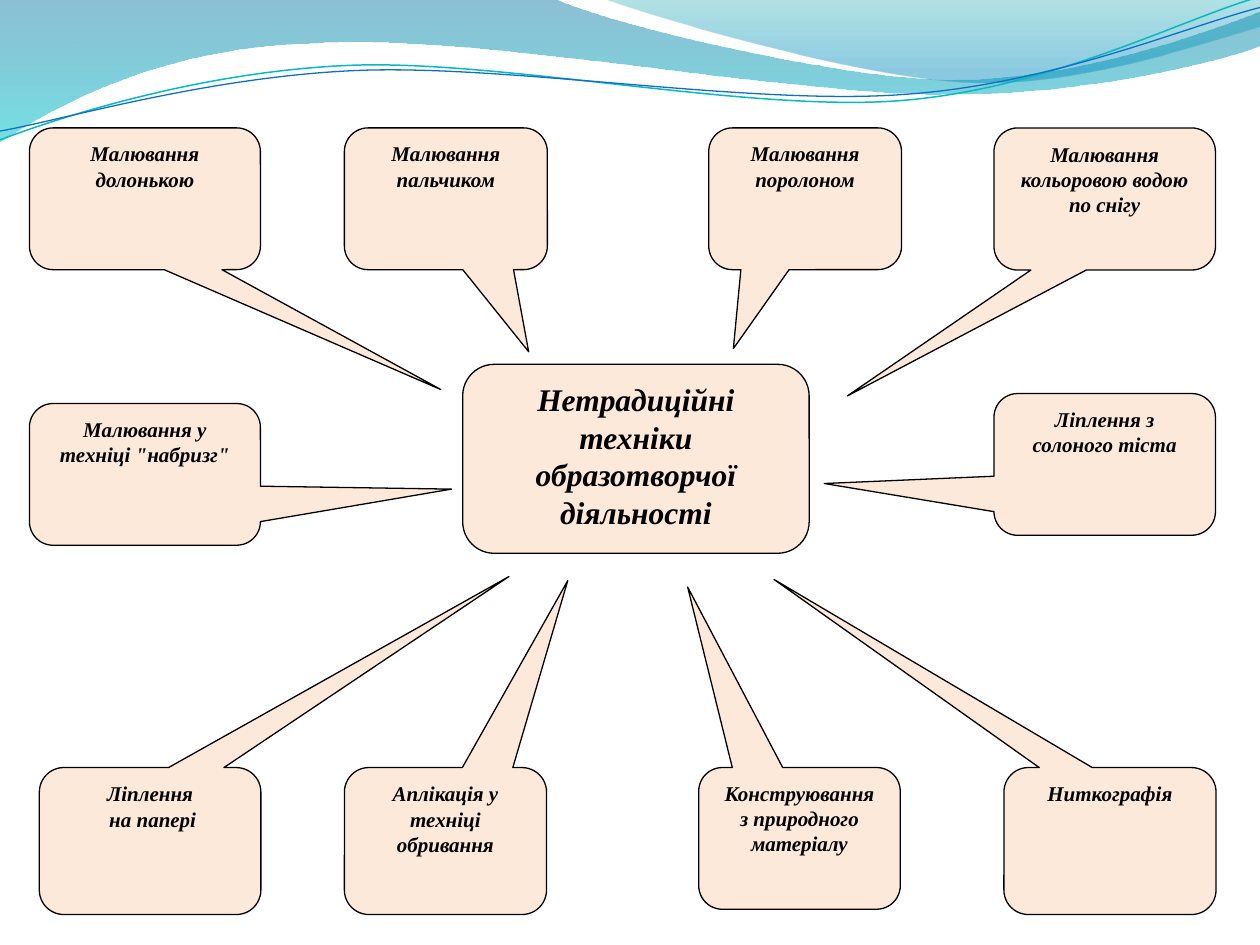
import math

from lxml import etree
from pptx import Presentation
from pptx import util as u
from pptx.dml.color import RGBColor
from pptx.enum import shapes, text

COLORS = {
    "card": "FDE9D9", "ink": "000000",
    "deep blue": "0074A1", "cyan": "00C6CF",
    "teal": "00A1A9", "sky": "008BBF",
    "teal line": "0AB8BF", "blue line": "0F6FC6",
}
rgb = {name: RGBColor.from_string(value) for name, value in COLORS.items()}

deck = Presentation()
deck.slide_width, deck.slide_height = u.Pt(720), u.Pt(540)
slide = deck.slides.add_slide(deck.slide_layouts[6])


def draw_curve(start, pieces, close):
    """Outline of straight pieces (one point) and Bezier pieces (three points)."""
    points = [(u.Pt(x), u.Pt(y)) for x, y in [start, *sum(pieces, [])]]
    builder = slide.shapes.build_freeform(*points[0])
    builder.add_line_segments(points[1:], close=close)
    curve = builder.convert_to_shape()
    curve.shadow.inherit = False
    segments = iter(list(curve.element.iter("{*}lnTo")))
    for piece in pieces:
        first, *others = [next(segments) for _ in piece]
        if others:
            first.tag = first.tag.replace("lnTo", "cubicBezTo")
            for segment in others:
                first.append(segment[0])
                segment.getparent().remove(segment)
    return curve


def write(shape, words, size=12, color="ink", after=0):
    frame = shape.text_frame
    frame.word_wrap = True
    frame.vertical_anchor = text.MSO_ANCHOR.TOP
    frame.text = words
    for paragraph in frame.paragraphs:
        paragraph.alignment = text.PP_ALIGN.CENTER
        paragraph.space_after = u.Pt(after)
        for run in paragraph.runs:
            font = run.font
            font.name, font.size = "Times New Roman", u.Pt(size)
            font.bold = font.italic = True
            font.color.rgb = rgb[color]


# Translucent waves along the top: start, pieces, (position, colour, alpha %) stops
waves = [
    ((0, 0),
     [[(316.8, -0.7)],
      [(342.7, 12.2), (478, 45.4), (545.8, 45.4)],
      [(614.2, 45.4), (689.8, 18.7), (720, 6.5)],
      [(720.7, 25.9)],
      [(707.8, 31.7), (626.4, 54.7), (537.1, 54)],
      [(447.8, 54), (275, 20.2), (185, 24.5)],
      [(92.9, 25.9), (33.1, 59.8), (-0.7, 81.4)],
      [(0, 0)]],
     [(0, "deep blue", 45), (1, "cyan", 55)]),
    ((344.9, -0.7),
     [[(366.5, 7.9), (491, 44.6), (553.7, 46.8)],
      [(616.3, 49.7), (691.9, 23), (720, 15.1)],
      [(720, 0)],
      [(344.9, -0.7)]],
     [(0, "teal", 30), (0.8, "sky", 45)]),
]
for start, pieces, stops in waves:
    wave = draw_curve(start, pieces, close=True)
    wave.line.fill.background()
    wave.fill.gradient()
    wave.fill.gradient_angle = 270
    for stop, (position, color, alpha) in zip(wave.fill.gradient_stops, stops):
        stop.position = position
        stop.color.rgb = rgb[color]
    for tint, (_, _, alpha) in zip(wave.element.spPr.iter("{*}srgbClr"), stops):
        etree.SubElement(tint, tint.tag.replace("srgbClr", "alpha"), val=str(alpha * 1000))

# Thin lines following the waves: level curves, turned as a whole by the tilt
TILT = 2.7
threads = [
    ((0, 79.9),
     [[(34.6, 67), (113.8, 41), (199.4, 37.4)],
      [(284.4, 33.8), (427, 64.1), (513.4, 57.6)],
      [(599.8, 51.1), (675.4, 10.8), (718.6, -1.4)]], 41.4, "teal line", 0.85),
    ((0, 74.9),
     [[(33.8, 69.1), (118.1, 43.9), (203.8, 40.3)],
      [(290.2, 36.7), (429.8, 60.5), (516.2, 54)],
      [(601.9, 48.2), (677.5, 15.1), (720, 4.3)]], 42.5, "blue line", 0.75),
]
cos, sin = math.cos(math.radians(TILT)), math.sin(math.radians(TILT))
for start, pieces, middle, color, width in threads:
    (start,), *pieces = [[(360 + (x - 360) * cos - (y - middle) * sin,
                           middle + (x - 360) * sin + (y - middle) * cos)
                          for x, y in piece] for piece in [[start], *pieces]]
    thread = draw_curve(start, pieces, close=False)
    thread.rotation = -TILT
    thread.fill.background()
    thread.line.color.rgb = rgb[color]
    thread.line.width = u.Pt(width)

# Central topic and the techniques around it:
# words, left, top, width, height, callout tip (x, y), size, space after
TOP, BOTTOM = 73.1, 438.6
cards = [
    ("Нетрадиційні техніки образотворчої діяльності",
     264.4, 208.2, 198, 108, None, 18, 0),
    ("Ліплення\n на папері", 22.5, BOTTOM, 126.6, 84, (1.62, -1.8), 12, 0),
    ("Конструювання з природного матеріалу",
     399.3, BOTTOM, 115.2, 81, (-0.555, -1.773), 12, 0),
    ("Ниткографія", 573.7, BOTTOM, 121.2, 84, (-1.584, -1.78), 12, 0),
    ("Аплікація у техніці обривання",
     196.8, BOTTOM, 115.5, 84, (0.605, -1.772), 12, 0),
    ("Малювання у техніці \"набризг\"", 16.8, 230.6, 132, 81, (1.327, 0.104), 12, 0),
    ("Ліплення з солоного тіста", 568, 224.9, 126.6, 81, (-1.266, 0.135), 12, 0),
    ("Малювання долонькою", 16.8, TOP, 132, 81, (1.281, 1.346), 12, 10),
    ("Малювання пальчиком", 196.8, TOP, 116, 81, (0.408, 1.079), 12, 10),
    ("Малювання поролоном", 405, TOP, 110.2, 81, (-0.372, 1.057), 12, 10),
    ("Малювання кольоровою водою по снігу",
     568, TOP, 126.6, 81.2, (-1.162, 1.386), 12, 10),
]
for words, left, top, width, height, tip, size, after in cards:
    outline = (shapes.MSO_SHAPE.ROUNDED_RECTANGULAR_CALLOUT if tip
               else shapes.MSO_SHAPE.ROUNDED_RECTANGLE)
    card = slide.shapes.add_shape(outline, u.Pt(left), u.Pt(top), u.Pt(width), u.Pt(height))
    for index, value in enumerate([*(tip or ()), 0.167]):
        card.adjustments[index] = value
    card.shadow.inherit = False
    card.fill.solid()
    card.fill.fore_color.rgb = rgb["card"]
    card.line.color.rgb = rgb["ink"]
    card.line.width = u.Pt(0.75)
    write(card, words, size=size, after=after)

deck.save("out.pptx")
